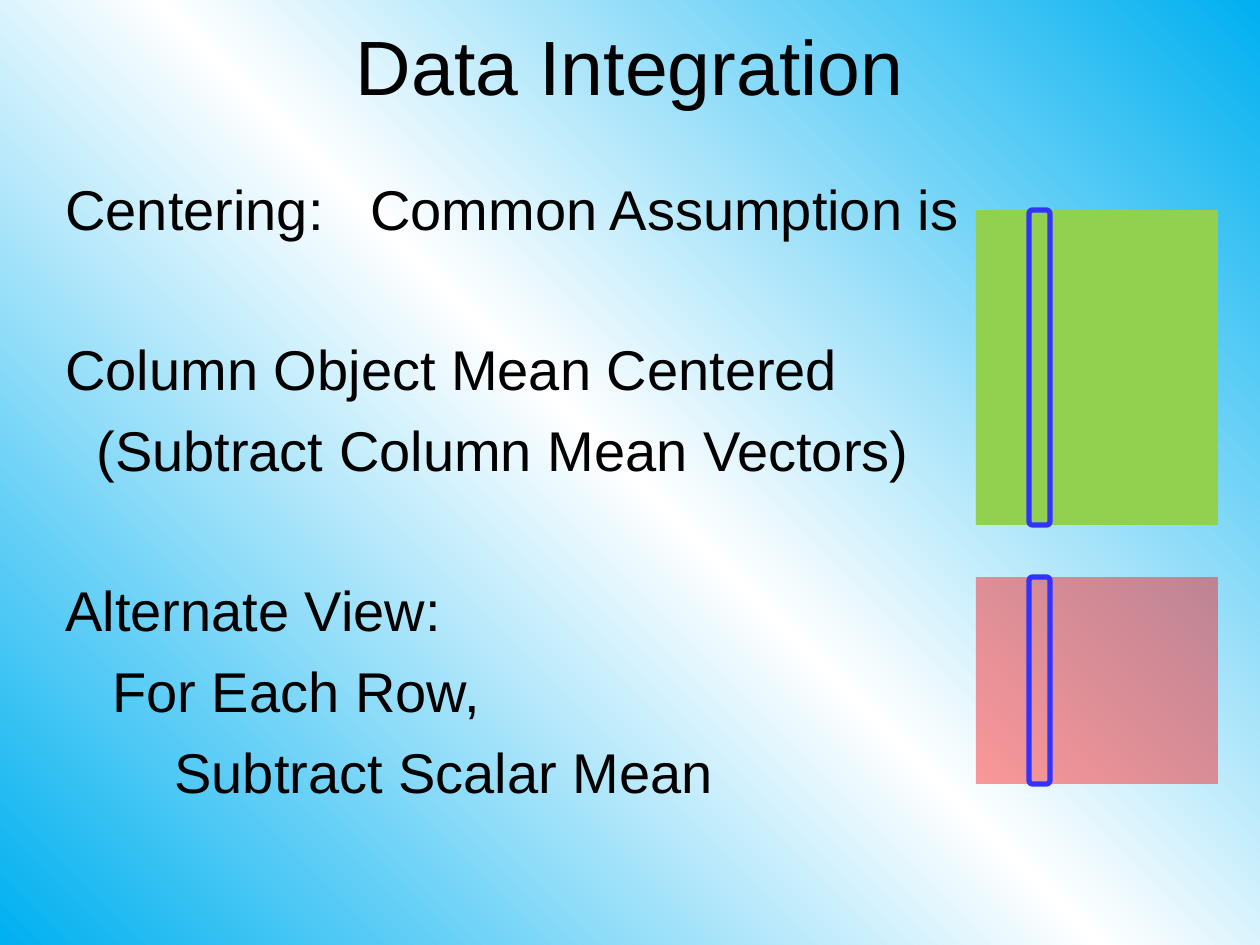
from lxml import etree
from pptx import Presentation, util as u
from pptx.dml.color import RGBColor
from pptx.enum import shapes, text
from pptx.oxml import ns

PX = 7258  # EMU per pixel, at 126 pixels to the inch
FONT = "Arial"
BLOCK_LEFT, BLOCK_WIDTH = 976, 242
COLUMN_LEFT, COLUMN_WIDTH = 1029, 21
LINE_GAP, SECTION_GAP = 8, 53  # points

# Wording, indent in px, space before in points
LINES = [
    ("Centering:   Common Assumption is", 0, 4),
    ("Column Object Mean Centered", 0, SECTION_GAP),
    ("(Subtract Column Mean Vectors)", 31, LINE_GAP),
    ("Alternate View:", 0, SECTION_GAP),
    ("For Each Row,", 47, LINE_GAP),
    ("Subtract Scalar Mean", 109, LINE_GAP),
]

# Top and height in px, fill, opacity in percent
BLOCKS = [(210, 315, "92D050", 100), (577, 207, "FF0000", 40)]


def px(*lengths):
    return [u.Emu(length * PX) for length in lengths]


def colour(code):
    return RGBColor.from_string(code)


def add_child(parent, tag, **attributes):
    return etree.SubElement(parent, ns.qn(tag), **attributes)


def paint_background(page):
    fill = page.background.fill
    fill.gradient()
    gradient = page.background._cSld.find(".//" + ns.qn("a:gradFill"))
    stops = gradient.find(ns.qn("a:gsLst"))
    for stop in list(stops):
        stops.remove(stop)
    for place, code in ((0, "00B0F0"), (50, "FFFFFF"), (100, "00B0F0")):
        stop = add_child(stops, "a:gs", pos=str(place * 1000))
        add_child(stop, "a:srgbClr", val=code)
    line = gradient.find(ns.qn("a:lin"))
    line.set("ang", str(135 * 60000))
    line.set("scaled", "0")


def add_span(para, wording, size):
    span = para.add_run()
    span.text = wording
    span.font.name, span.font.size = FONT, u.Pt(size)
    span.font.color.rgb = colour("000000")


def set_title(page, wording):
    title = page.shapes.title
    title.left, title.top, title.width, title.height = px(63, 0, 1134, 130)
    title.text_frame.vertical_anchor = text.MSO_ANCHOR.MIDDLE
    para = title.text_frame.paragraphs[0]
    para.alignment = text.PP_ALIGN.CENTER
    add_span(para, wording, 44)


def add_body(page):
    box = page.shapes.add_textbox(*px(53, 168, 1134, 724))
    frame = box.text_frame
    frame.word_wrap = True
    for number, (wording, indent, gap) in enumerate(LINES):
        para = frame.add_paragraph() if number else frame.paragraphs[0]
        para.space_before = u.Pt(gap)
        para._p.get_or_add_pPr().set("marL", str(indent * PX))
        add_span(para, wording, 32)


def add_block(page, top, height, code, opacity):
    block = page.shapes.add_shape(
        shapes.MSO_SHAPE.RECTANGLE, *px(BLOCK_LEFT, top, BLOCK_WIDTH, height))
    block.shadow.inherit = False
    block.fill.solid()
    block.fill.fore_color.rgb = colour(code)
    block.line.fill.background()
    if opacity < 100:
        shade = block._element.spPr.find(".//" + ns.qn("a:srgbClr"))
        add_child(shade, "a:alpha", val=str(opacity * 1000))


def add_column_outline(page, top, height):
    outline = page.shapes.add_shape(
        shapes.MSO_SHAPE.ROUNDED_RECTANGLE,
        *px(COLUMN_LEFT, top, COLUMN_WIDTH, height))
    outline.shadow.inherit = False
    outline.fill.background()
    outline.line.color.rgb = colour("3333FF")
    outline.line.width = u.Pt(3)


def main():
    deck = Presentation()
    deck.slide_width, deck.slide_height = px(1260, 945)
    page = deck.slides.add_slide(deck.slide_layouts[5])

    # Background and wording
    paint_background(page)
    set_title(page, "Data Integration")
    add_body(page)

    # Data blocks, then one marked column across each
    for block in BLOCKS:
        add_block(page, *block)
    for top, height, *_ in BLOCKS:
        add_column_outline(page, top, height)

    deck.save("out.pptx")


if __name__ == "__main__":
    main()
